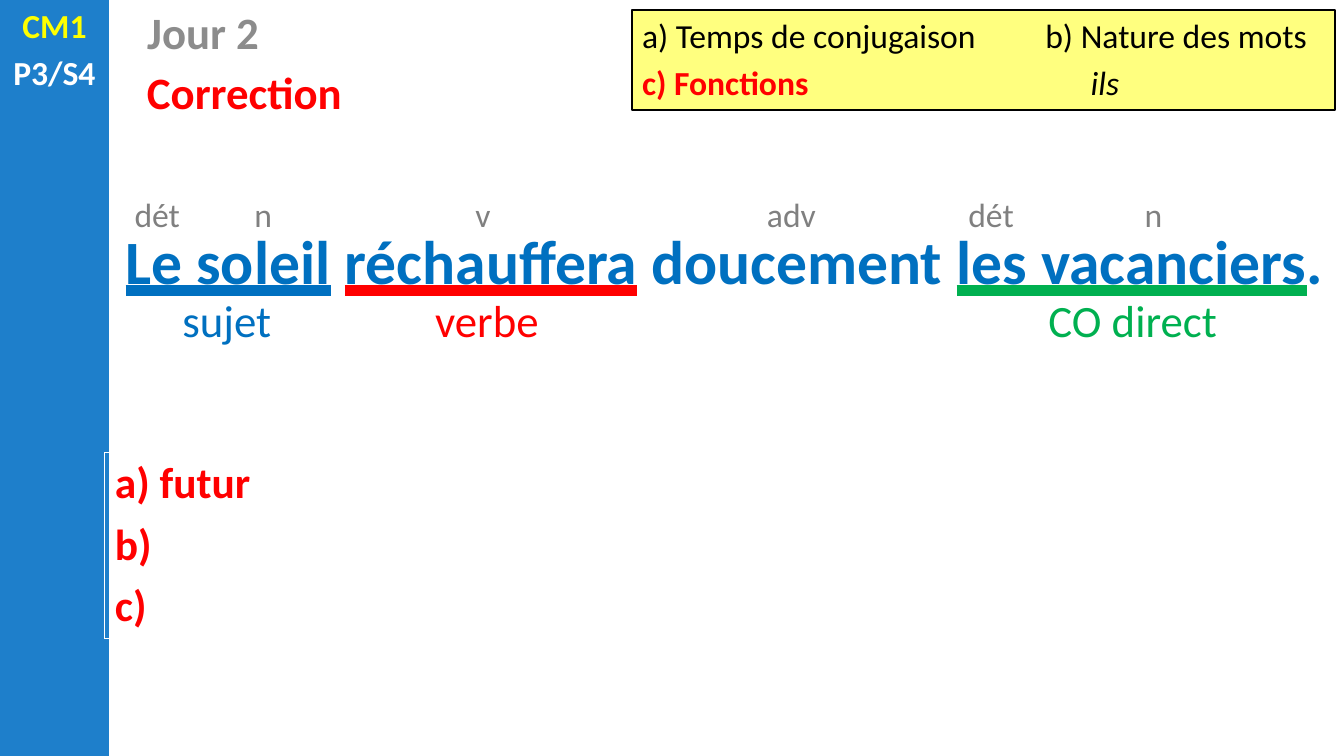
from lxml import etree
from pptx import Presentation
from pptx import util as u
from pptx.dml import color
from pptx.enum import shapes, text
from pptx.oxml import ns

HUES = {
    "side": "1E7FCB", "day": "8C8C8C", "word": "0070C0", "red": "FF0000",
    "green": "00B050", "note": "808080", "black": "000000",
    "white": "FFFFFF", "yellow": "FFFF00",
}
MID = text.PP_ALIGN.CENTER
LEFT = text.PP_ALIGN.LEFT


def hue(name):
    return color.RGBColor.from_string(HUES[name])


def place(shape, box):
    for name, size in zip(("left", "top", "width", "height"), box):
        setattr(shape, name, u.Inches(size))


def add_run(para, words, size, tint, **extra):
    run = para.add_run()
    run.text = words
    form = {"size": u.Pt(size), "name": "Calibri", "bold": False, **extra}
    for key, value in form.items():
        setattr(run.font, key, value)
    run.font.color.rgb = hue(tint)
    return run


def add_line(run, tint):
    run.font.underline = text.MSO_UNDERLINE.HEAVY_LINE
    props = run.font._element
    fill = etree.Element(ns.qn("a:uFill"))
    solid = etree.SubElement(fill, ns.qn("a:solidFill"))
    etree.SubElement(solid, ns.qn("a:srgbClr"), val=HUES[tint])
    props.find(ns.qn("a:latin")).addprevious(fill)


def set_tab(para, inches):
    stops = etree.SubElement(para._p.get_or_add_pPr(), ns.qn("a:tabLst"))
    etree.SubElement(stops, ns.qn("a:tab"), pos=str(u.Inches(inches)), algn="l")


def set_frame(frame):
    form = {
        "word_wrap": True, "auto_size": text.MSO_AUTO_SIZE.NONE,
        "vertical_anchor": text.MSO_ANCHOR.TOP,
        "margin_left": u.Inches(0.1), "margin_right": u.Inches(0.1),
        "margin_top": u.Inches(0.05), "margin_bottom": u.Inches(0.05),
    }
    for key, value in form.items():
        setattr(frame, key, value)


def add_paras(frame, count, align, **gaps):
    for spot in range(count):
        para = frame.add_paragraph() if spot else frame.paragraphs[0]
        para.alignment = align
        for key, value in gaps.items():
            setattr(para, key, u.Pt(value))
    return frame.paragraphs


def add_label(slide, box, words, size, tint, align=MID, **extra):
    label = slide.shapes.add_textbox(0, 0, 0, 0)
    place(label, box)
    set_frame(label.text_frame)
    para, = add_paras(label.text_frame, 1, align)
    add_run(para, words, size, tint, **extra)


def add_rect(slide, box, tint):
    rect = slide.shapes.add_shape(shapes.MSO_SHAPE.RECTANGLE, 0, 0, 0, 0)
    place(rect, box)
    rect.shadow.inherit = False
    rect.fill.solid()
    rect.fill.fore_color.rgb = hue(tint)
    rect.line.fill.background()
    return rect


def add_side(slide):
    add_rect(slide, (0, 0, 1.08, 7.5), "side")
    label = slide.shapes.add_textbox(0, 0, 0, 0)
    place(label, (0, 0, 1.08, 0.99))
    set_frame(label.text_frame)
    grade, week = add_paras(label.text_frame, 2, MID, space_before=4.8)
    add_run(grade, "CM1", 24, "yellow", bold=True)
    add_run(week, "P3/S4", 24, "white", bold=True)


def add_title(slide):
    title = slide.shapes.title
    place(title, (1.36, 0, 7.91, 0.64))
    set_frame(title.text_frame)
    para, = add_paras(title.text_frame, 1, LEFT)
    add_run(para, "Jour 2", 32, "day", bold=True)


def add_phrase(slide):
    phrase = slide.shapes.add_textbox(0, 0, 0, 0)
    place(phrase, (1.04, 2.16, 12.29, 0.84))
    set_frame(phrase.text_frame)
    para, = add_paras(phrase.text_frame, 1, MID)
    for words, tint in (
        ("Le soleil", "word"), (" ", None), ("réchauffera", "red"),
        (" doucement ", None), ("les vacanciers", "green"), (".", None),
    ):
        run = add_run(para, words, 44, "word", bold=True)
        if tint:
            add_line(run, tint)


def add_tasks(slide):
    rect = add_rect(slide, (6.27, 0.1, 6.97, 0.99), "yellow")
    shade = rect.fill._xPr.find(ns.qn("a:solidFill"))[0]
    etree.SubElement(shade, ns.qn("a:alpha"), val="50000")
    rect.line.color.rgb = hue("black")
    rect.line.width = u.Pt(1.5)
    set_frame(rect.text_frame)
    first, last = add_paras(rect.text_frame, 2, LEFT, space_before=4.8)
    set_tab(first, 4)
    set_tab(last, 4.45)
    add_run(first, "a) Temps de conjugaison\tb) Nature des mots", 24, "black")
    add_run(last, "c) Fonctions\t", 24, "red", bold=True)
    add_run(last, "ils", 24, "black", italic=True)


def add_key(slide):
    box = [u.Inches(n) for n in (1.04, 4.49, 12.29, 1.82)]
    table = slide.shapes.add_table(1, 1, *box).table
    table.first_row = table.horz_banding = False
    cell = table.cell(0, 0)
    cell.fill.background()
    answers = ("a) futur", "b)", "c)")
    paras = add_paras(cell.text_frame, len(answers), LEFT, space_after=6)
    for para, words in zip(paras, answers):
        add_run(para, words, 31, "red", bold=True)


def main():
    deck = Presentation()
    deck.slide_width, deck.slide_height = u.Inches(13.33), u.Inches(7.5)
    slide = deck.slides.add_slide(deck.slide_layouts[5])
    add_side(slide)
    add_title(slide)
    add_phrase(slide)
    add_label(slide, (1.36, 0.59, 4.83, 0.64), "Correction", 32, "red",
              LEFT, bold=True)
    add_tasks(slide)
    add_key(slide)
    for left, words in (
        (1.11, "dét"), (2.16, "n"), (4.34, "v"),
        (7.4, "adv"), (9.38, "dét"), (10.99, "n"),
    ):
        add_label(slide, (left, 1.87, 0.9, 0.5), words, 24, "note")
    for left, width, words, tint in (
        (1.63, 1.24, "sujet", "word"), (4.21, 1.24, "verbe", "red"),
        (10.28, 1.91, "CO direct", "green"),
    ):
        add_label(slide, (left, 2.85, width, 0.64), words, 32, tint)
    deck.save("out.pptx")


if __name__ == "__main__":
    main()
